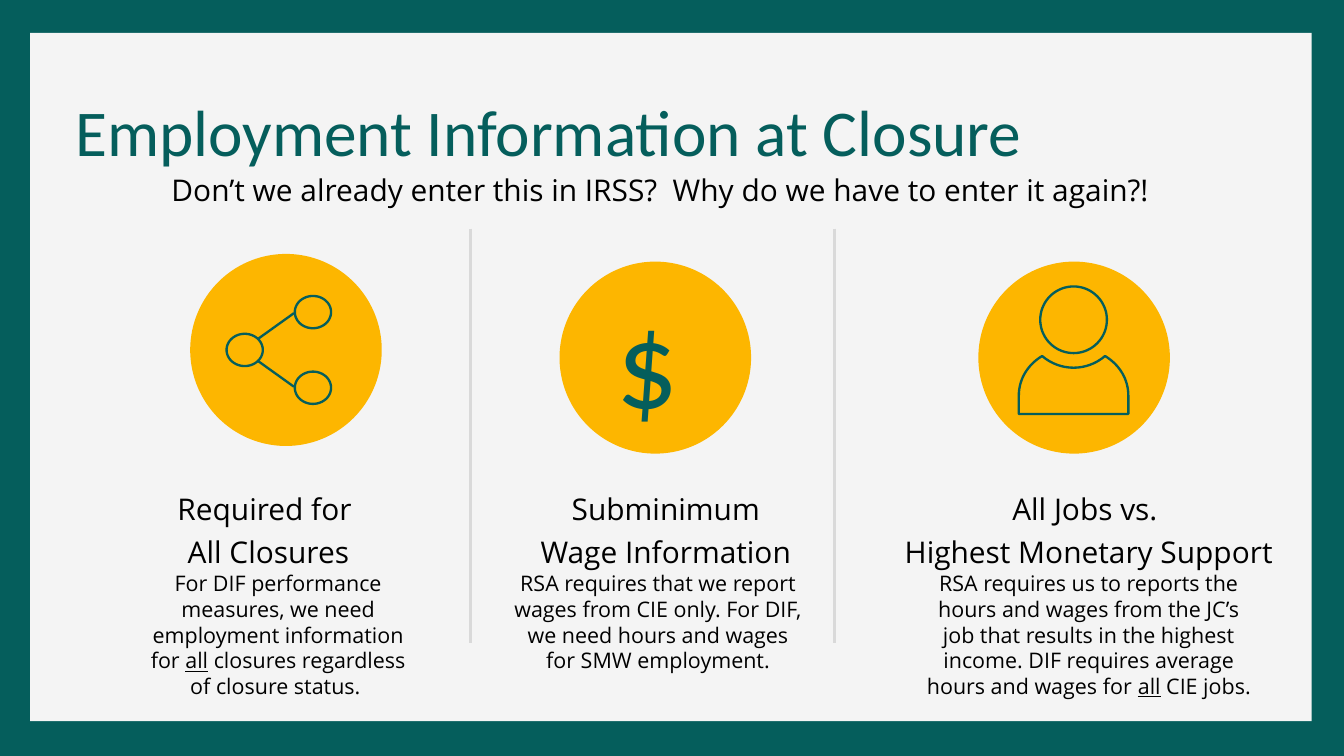
import math

import lxml.etree
import pptx
import pptx.dml.color
import pptx.enum.shapes
import pptx.enum.text
import pptx.oxml.ns
import pptx.util

Cm = pptx.util.Cm
Pt = pptx.util.Pt
SHAPE = pptx.enum.shapes.MSO_SHAPE
STRAIGHT = pptx.enum.shapes.MSO_CONNECTOR.STRAIGHT
ALIGN = pptx.enum.text.PP_ALIGN

TEAL, GOLD, PALE, GREY, BLACK = "055E5C", "FDB600", "F4F4F4", "D9D9D9", "000000"


def paint(fill, color):
    fill.solid()
    fill.fore_color.rgb = pptx.dml.color.RGBColor.from_string(color)


def write(sp, paragraphs, size, font="Open Sans", color=BLACK, align=ALIGN.CENTER,
          spacing=1.2, inset=0):
    tf = sp.text_frame
    tf.word_wrap = True
    tf.auto_size = pptx.enum.text.MSO_AUTO_SIZE.NONE
    tf.vertical_anchor = pptx.enum.text.MSO_ANCHOR.TOP
    tf.margin_left = tf.margin_right = tf.margin_top = tf.margin_bottom = Cm(inset)
    for i, runs in enumerate(paragraphs):
        p = tf.paragraphs[0] if i == 0 else tf.add_paragraph()
        p.alignment = align
        p.line_spacing = spacing
        for text in runs:
            r = p.add_run()
            r.text = text
            r.font.size = Pt(size)
            r.font.name = font
            r.font.underline = text == "all"
            paint(r.font.fill, color)


prs = pptx.Presentation()
prs.slide_width, prs.slide_height = Cm(50.8), Cm(28.58)
s = prs.slides.add_slide(prs.slide_layouts[5])
paint(s.background.fill, TEAL)

panel = s.shapes.add_shape(SHAPE.RECTANGLE, Cm(1.14), Cm(1.24), Cm(48.44), Cm(26.02))
paint(panel.fill, PALE)
panel.line.fill.background()
panel.shadow.inherit = False

title = s.shapes.title
title.left, title.top, title.width, title.height = Cm(2.84), Cm(2.84), Cm(45), Cm(3)
write(title, [["Employment Information at Closure"]], 70, "Calibri", TEAL, ALIGN.LEFT)
s.shapes._spTree.remove(title.element)
s.shapes._spTree.append(title.element)

subtitle = s.shapes.add_textbox(Cm(5), Cm(6.22), Cm(39.95), Cm(1.37))
write(subtitle, [["Don’t we already enter this in IRSS?  Why do we have to enter it again?!"]], 32)

columns = [
    ((7.19, 9.6), (3.66, 12.98), [["Required for "], ["All Closures"]], (5.59, 9.86),
     ["For DIF performance measures, we need employment information for ", "all",
      " closures regardless of closure status. "]),
    ((21.15, 9.89), (20.37, 9.6), [["Subminimum Wage Information"]], (19.38, 11),
     ["RSA requires that we report wages from CIE only. For DIF, we need hours and "
      "wages for SMW employment."]),
    ((36.98, 9.89), (34.16, 14), [["All Jobs vs. "], ["Highest Monetary Support"]],
     (34.95, 12.42),
     ["RSA requires us to reports the hours and wages from the JC’s job that results in "
      "the highest income. DIF requires average hours and wages for ", "all", " CIE jobs. "]),
]
for (cx, cy), (hx, hw), heading, (bx, bw), body in columns:
    disc = s.shapes.add_shape(SHAPE.OVAL, Cm(cx), Cm(cy), Cm(7.24), Cm(7.26))
    paint(disc.fill, GOLD)
    disc.line.fill.background()
    disc.shadow.inherit = False
    write(s.shapes.add_textbox(Cm(hx), Cm(18.29), Cm(hw), Cm(3.02)), heading, 32)
    write(s.shapes.add_textbox(Cm(bx), Cm(21.56), Cm(bw), Cm(4.93)), [body], 23, spacing=1)

for x in (17.78, 31.53):
    divider = s.shapes.add_connector(STRAIGHT, Cm(x), Cm(8.64), Cm(x), Cm(24.31))
    paint(divider.line.fill, GREY)
    divider.line.width = Pt(3)
    lxml.etree.SubElement(divider.element.spPr, pptx.oxml.ns.qn("a:effectLst"))

share_y, person_x = 13.23, 40.58
share_rings = [(9.25, share_y, 1.37, 1.22)]
links = []
for side in (-1, 1):
    share_rings.append((11.83, share_y + side * 1.43, 1.37, 1.22))
    links.append([(9.77, share_y + side * 0.43), (11.11, share_y + side * 1.39)])

curves = [
    [(-2.07, 14.96), (-2.07, 14.35), (-1.75, 13.8), (-1.19, 13.46)],
    [(-1.19, 13.46), (-0.5, 14.05), (0.5, 14.05), (1.19, 13.46)],
    [(1.19, 13.46), (1.75, 13.8), (2.07, 14.35), (2.07, 14.96)],
]
body = [(person_x - 2.07, 15.65)]
for curve in curves:
    for i in range(17):
        t = i / 16
        weights = [(1 - t) ** 3, 3 * t * (1 - t) ** 2, 3 * t ** 2 * (1 - t), t ** 3]
        x, y = [sum(w * c[k] for w, c in zip(weights, curve)) for k in (0, 1)]
        body.append((person_x + x, y))
body += [(person_x + 2.07, 15.65), body[0]]

icons = [(share_rings, links), ([(person_x, 12.09, 2.52, 2.52)], [body])]
for rings, contours in icons:
    for x, y, w, h in rings:
        angles = [math.radians(a) for a in range(0, 361, 5)]
        contours.append([(x + w / 2 * math.cos(a), y + h / 2 * math.sin(a)) for a in angles])
    fb = s.shapes.build_freeform(*[Cm(v) for v in contours[0][0]])
    for i, contour in enumerate(contours):
        points = [(Cm(x), Cm(y)) for x, y in contour]
        if i:
            fb.move_to(*points[0])
        fb.add_line_segments(points[1:], close=contour[0] == contour[-1])
    icon = fb.convert_to_shape()
    icon.fill.background()
    paint(icon.line.fill, TEAL)
    icon.line.width = Pt(2.5)
    icon.shadow.inherit = False

dollar = s.shapes.add_textbox(Cm(23.04), Cm(10.57), Cm(2.9), Cm(3))
write(dollar, [["$"]], 131, "Calibri", TEAL, ALIGN.LEFT, 1, 0.25)

prs.save("out.pptx")
